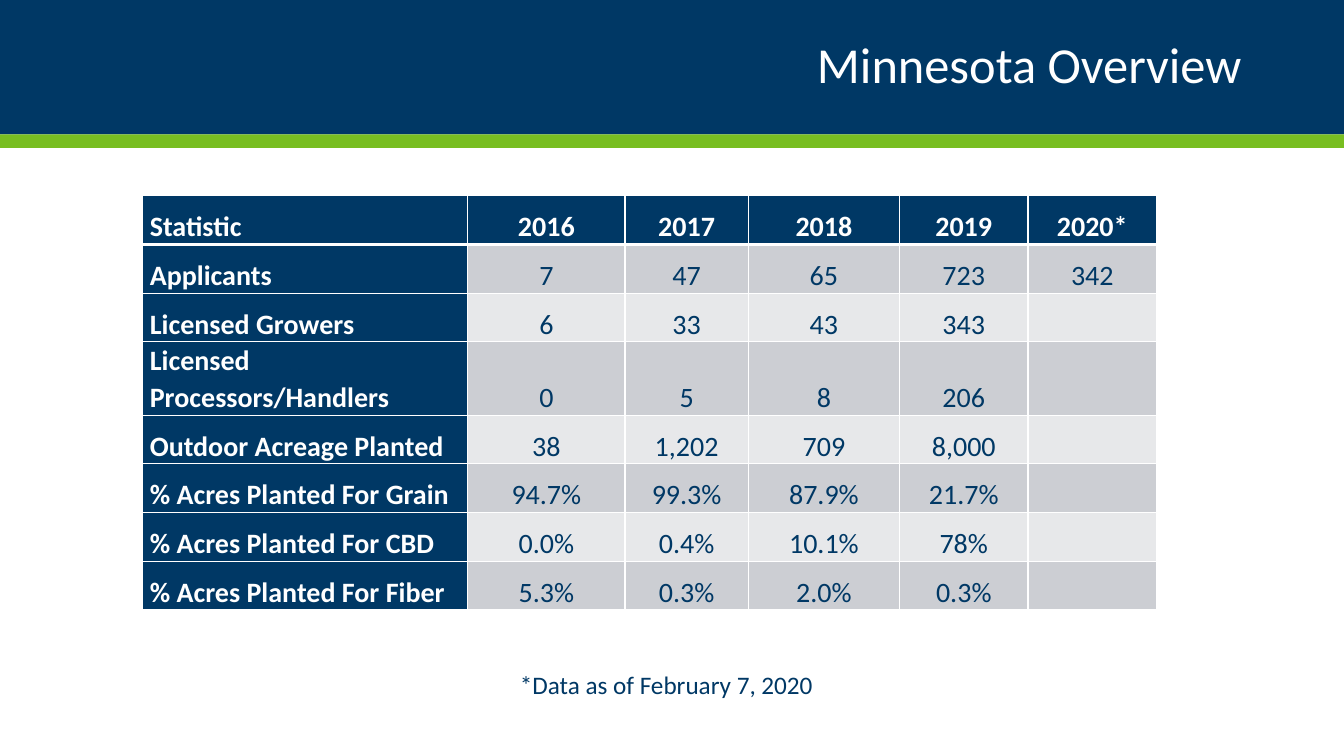
from dataclasses import dataclass

from lxml import etree
from pptx import Presentation, util as u
from pptx.dml import color
from pptx.enum import shapes, text
from pptx.oxml import ns

HUES = {"navy": "003865", "green": "78BE21", "white": "FFFFFF",
        "dark": "CCCED3", "light": "E7E8EA"}
WIDE, HIGH = u.Inches(13.333), u.Inches(7.5)
COLS, ROWS = 160, 90
SPANS = [38.7, 18.7, 14.7, 18, 15.3, 15.3]
ROW = 5.8
STATS = [
    ["Statistic", "2016", "2017", "2018", "2019", "2020*"],
    ["Applicants", "7", "47", "65", "723", "342"],
    ["Licensed Growers", "6", "33", "43", "343", ""],
    ["Licensed Processors/Handlers", "0", "5", "8", "206", ""],
    ["Outdoor Acreage Planted", "38", "1,202", "709", "8,000", ""],
    ["% Acres Planted For Grain", "94.7%", "99.3%", "87.9%", "21.7%", ""],
    ["% Acres Planted For CBD", "0.0%", "0.4%", "10.1%", "78%", ""],
    ["% Acres Planted For Fiber", "5.3%", "0.3%", "2.0%", "0.3%", ""],
]


@dataclass
class Box:
    left: float
    top: float
    wide: float
    high: float

    def place(self) -> tuple:
        return (across(self.left), down(self.top),
                across(self.wide), down(self.high))


@dataclass
class Band:
    box: Box
    hue: str


@dataclass
class Label:
    box: Box
    words: str
    size: int
    hue: str
    align: text.PP_ALIGN
    lead: float
    wrap: bool


BANDS = [Band(Box(0, 0, COLS, 16), "navy"),
         Band(Box(0, 16, COLS, 1.6), "green")]
LABELS = [
    Label(Box(11, 2, 138, 12), "Minnesota Overview", 36, "white",
          text.PP_ALIGN.RIGHT, 0.9, True),
    Label(Box(60.7, 79.1, 37.7, 4.8), "*Data as of February 7, 2020", 18,
          "navy", text.PP_ALIGN.LEFT, 1, False),
]


def across(count: float) -> int:
    return round(WIDE * count / COLS)


def down(count: float) -> int:
    return round(HIGH * count / ROWS)


def paint(fill, hue: str) -> None:
    fill.solid()
    fill.fore_color.rgb = color.RGBColor.from_string(HUES[hue])


def write(frame, words: str, *, size: int, hue: str, align: text.PP_ALIGN,
          lead: float, bold: bool = False) -> None:
    para = frame.paragraphs[0]
    para.alignment = align
    para.line_spacing = lead
    if not words:
        return
    run = para.add_run()
    run.text = words
    run.font.name = "Calibri"
    run.font.size = u.Pt(size)
    run.font.bold = bold
    run.font.color.rgb = color.RGBColor.from_string(HUES[hue])


def edge(cell, side: str, points: float) -> None:
    props = cell._tc.get_or_add_tcPr()
    line = etree.SubElement(props, ns.qn(f"a:ln{side}"), w=str(u.Pt(points)))
    fill = etree.SubElement(line, ns.qn("a:solidFill"))
    etree.SubElement(fill, ns.qn("a:srgbClr"), val=HUES["white"])


def draw_band(slide, band: Band) -> None:
    shape = slide.shapes.add_shape(shapes.MSO_SHAPE.RECTANGLE,
                                   *band.box.place())
    shape.shadow.inherit = False
    paint(shape.fill, band.hue)
    shape.line.fill.background()


def draw_label(slide, label: Label) -> None:
    frame = slide.shapes.add_textbox(*label.box.place()).text_frame
    frame.word_wrap = label.wrap
    frame.vertical_anchor = text.MSO_ANCHOR.MIDDLE
    write(frame, label.words, size=label.size, hue=label.hue,
          align=label.align, lead=label.lead)


def draw_cell(cell, words: str, row: int, col: int) -> None:
    head = row == 0 or col == 0
    for side in "LRTB":
        thick = (side, row) in (("B", 0), ("T", 1))
        edge(cell, side, 3 if thick else 1)
    paint(cell.fill, "navy" if head else "dark" if row % 2 else "light")
    cell.margin_left = cell.margin_right = u.Inches(0.07)
    cell.margin_top = cell.margin_bottom = 0
    cell.vertical_anchor = text.MSO_ANCHOR.BOTTOM
    write(cell.text_frame, words, size=20, hue="white" if head else "navy",
          align=text.PP_ALIGN.CENTER if col else text.PP_ALIGN.LEFT,
          lead=1.07, bold=head)


def draw_table(slide) -> None:
    box = Box(17, 23.3, sum(SPANS), ROW * len(STATS))
    table = slide.shapes.add_table(len(STATS), len(SPANS),
                                   *box.place()).table
    table.first_row = table.horz_banding = False
    for col, span in zip(table.columns, SPANS):
        col.width = across(span)
    for row, stat in enumerate(STATS):
        table.rows[row].height = down(ROW)
        for col, words in enumerate(stat):
            draw_cell(table.cell(row, col), words, row, col)


def main() -> None:
    deck = Presentation()
    deck.slide_width, deck.slide_height = WIDE, HIGH
    slide = deck.slides.add_slide(deck.slide_layouts[6])
    for band in BANDS:
        draw_band(slide, band)
    draw_table(slide)
    for label in LABELS:
        draw_label(slide, label)
    deck.save("out.pptx")


if __name__ == "__main__":
    main()
